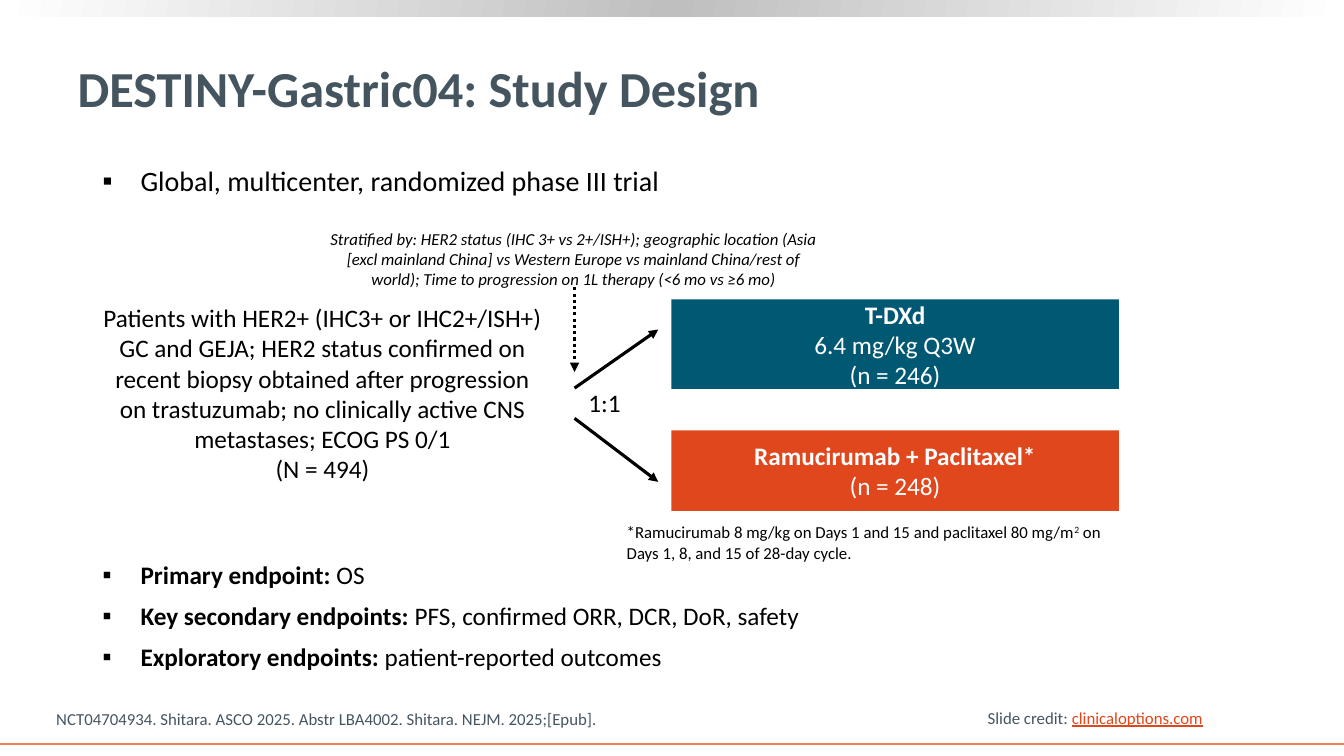
from lxml.etree import SubElement
from pptx import Presentation
from pptx.dml.color import RGBColor
from pptx.enum.dml import MSO_LINE
from pptx.enum.shapes import MSO_CONNECTOR, MSO_SHAPE
from pptx.enum.text import MSO_ANCHOR, MSO_AUTO_SIZE, PP_ALIGN
from pptx.oxml import parse_xml
from pptx.oxml.ns import nsdecls, qn
from pptx.util import Pt

BLACK = RGBColor(0x00, 0x00, 0x00)
WHITE = RGBColor(0xFF, 0xFF, 0xFF)
SLATE = RGBColor(0x45, 0x55, 0x60)
TEAL = RGBColor(0x01, 0x58, 0x73)
ORANGE = RGBColor(0xE1, 0x47, 0x1D)
CORAL = RGBColor(0xF4, 0x7D, 0x55)
SILVER = RGBColor(0xBF, 0xBF, 0xBF)

WIDTH, HEIGHT = 960, 540
BOLD = {"bold": True}
SUPERSCRIPT = {"raised": True}
LINK = {"underline": True, "color": ORANGE}
CENTER = PP_ALIGN.CENTER

# Each paragraph is a list of (text, format) spans.
TITLE = [[("DESTINY-Gastric04: Study Design", BOLD)]]
DESIGN = [[("Global, multicenter, randomized phase III trial", {})]]
ENDPOINTS = [
    [("Primary endpoint: ", BOLD), ("OS", {})],
    [("Key secondary endpoints: ", BOLD), ("PFS, confirmed ORR, DCR, DoR, safety", {})],
    [("Exploratory endpoints: ", BOLD), ("patient-reported outcomes", {})],
]
PATIENTS = [
    [("Patients with HER2+ (IHC3+ or IHC2+/ISH+) GC and GEJA; HER2 status confirmed "
      "on recent biopsy obtained after progression on trastuzumab; no clinically "
      "active CNS metastases; ECOG PS 0/1", {})],
    [("(N = 494)", {})],
]
STRATIFICATION = [[
    ("Stratified by: HER2 status (IHC 3+ vs 2+/ISH+); geographic location (Asia [excl "
     "mainland China] vs Western Europe vs mainland China/rest of world); Time to "
     "progression on 1L therapy (<6 mo vs ≥6 mo)", {"italic": True}),
]]
DOSING = [[
    ("*Ramucirumab 8 mg/kg on Days 1 and 15 and paclitaxel 80 mg/m", {}),
    ("2", SUPERSCRIPT), (" on", {}), ("\n", {}),
    ("Days 1, 8, and 15 of 28-day cycle.", {}),
]]
RATIO = [[("1:1", {})]]
CITATION = [[("NCT04704934. Shitara. ASCO 2025. Abstr LBA4002. Shitara. NEJM. 2025;[Epub].", {})]]
CREDIT = [[("Slide credit: ", {}), ("clinicaloptions.com", LINK)]]

# text, (left, top, width, height), size, colour, alignment, wrap
TEXTS = [
    (PATIENTS, (66.2, 212.4, 328.3, 138.2), 18, BLACK, CENTER, True),
    (STRATIFICATION, (225.4, 159.8, 368.6, 51.1), 12, BLACK, CENTER, True),
    (DOSING, (440.6, 369.4, 407.5, 36), 12, BLACK, None, True),
    (RATIO, (413.3, 272.9, 38.9, 28.8), 18, BLACK, None, True),
    (CITATION, (33.1, 502.6, 407.5, 21.6), 12, SLATE, None, True),
    (CREDIT, (698.4, 501.8, 169.9, 21.6), 12, SLATE, None, False),
]

# text, top, height, fill
ARM_LEFT, ARM_WIDTH = 479.5, 319.7
ARMS = [
    ([[("T-DXd", BOLD)], [("6.4 mg/kg Q3W", {})], [("(n = 246)", {})]], 213.8, 64.1, TEAL),
    ([[("Ramucirumab + Paclitaxel*", BOLD)], [("(n = 248)", {})]], 307.4, 57.6, ORANGE),
]

# start, end, dash
SPLIT_X, ARM_X = 410.4, 470.2
ARROWS = [
    ((SPLIT_X, 205.2), (SPLIT_X, 265.7), MSO_LINE.ROUND_DOT),
    ((SPLIT_X, 277.2), (ARM_X, 235.4), None),
    ((SPLIT_X, 298.8), (ARM_X, 344.2), None),
]


def place(shape, area):
    for side, value in zip(("left", "top", "width", "height"), area):
        setattr(shape, side, Pt(value))


def fill_text(shape, paragraphs, size, color, align=None, anchor=MSO_ANCHOR.TOP,
              wrap=True, bullets=False):
    frame = shape.text_frame
    frame.auto_size = MSO_AUTO_SIZE.NONE
    frame.word_wrap = wrap
    frame.vertical_anchor = anchor
    for index, spans in enumerate(paragraphs):
        para = frame.add_paragraph() if index else frame.paragraphs[0]
        para.alignment = align or PP_ALIGN.LEFT
        para.line_spacing = 0.9 if bullets else 1
        para.space_before = Pt(10 if bullets and index else 0)
        para.space_after = Pt(0)
        if bullets:
            add_bullet(para)
        for text, style in spans:
            if text == "\n":
                para.add_line_break()
            else:
                add_span(para, text, size, color, style)


def add_span(para, text, size, color, style):
    span = para.add_run()
    span.text = text
    font = span.font
    values = {"name": "Calibri", "size": Pt(size), "bold": False, "color": color, **style}
    font.color.rgb = values.pop("color")
    if values.pop("raised", False):
        font._element.set("baseline", "30000")
    for name, value in values.items():
        setattr(font, name, value)


def add_bullet(para):
    props = para._p.get_or_add_pPr()
    props.set("marL", str(Pt(27)))
    props.set("indent", str(-Pt(27)))
    tint = SubElement(props, qn("a:buClr"))
    SubElement(tint, qn("a:srgbClr"), val=str(BLACK))
    SubElement(props, qn("a:buFont"), typeface="Calibri")
    SubElement(props, qn("a:buChar"), char="▪")


def add_block(page, area, fill=None):
    block = page.shapes.add_shape(MSO_SHAPE.RECTANGLE, *map(Pt, area))
    block.shadow.inherit = False
    block.line.fill.background()
    if fill is not None:
        block.fill.solid()
        block.fill.fore_color.rgb = fill
    return block


def add_line(page, start, end, color, width, dash=None, arrow=False):
    line = page.shapes.add_connector(MSO_CONNECTOR.STRAIGHT, *map(Pt, start + end))
    line.line.color.rgb = color
    line.line.width = Pt(width)
    if dash is not None:
        line.line.dash_style = dash
    if arrow:
        SubElement(line.line._get_or_add_ln(), qn("a:tailEnd"), type="triangle")
    SubElement(line._element.spPr, qn("a:effectLst"))


def add_top_band(page):
    band = add_block(page, (0, 0, WIDTH, 11.5))
    stops = "".join(
        f'<a:gs pos="{percent * 1000}"><a:srgbClr val="{color}"/></a:gs>'
        for percent, color in ((0, WHITE), (50, SILVER), (100, WHITE)))
    gradient = parse_xml(
        f'<a:gradFill {nsdecls("a")} rotWithShape="1"><a:gsLst>{stops}</a:gsLst>'
        f'<a:lin ang="{190 * 60000}" scaled="0"/></a:gradFill>')
    band._element.spPr.find(qn("a:prstGeom")).addnext(gradient)


def main():
    deck = Presentation()
    deck.slide_width, deck.slide_height = Pt(WIDTH), Pt(HEIGHT)
    page = deck.slides.add_slide(deck.slide_layouts.get_by_name("Two Content"))
    add_top_band(page)
    add_line(page, (0, 531.4), (WIDTH, 531.4), CORAL, 1.5)

    title, design, endpoints = page.placeholders
    place(title, (48.2, 18.7, 877, 87.1))
    fill_text(title, TITLE, 36, SLATE, anchor=MSO_ANCHOR.MIDDLE)
    place(design, (66.2, 115.9, 856.8, 40.3))
    fill_text(design, DESIGN, 20, BLACK, bullets=True)
    place(endpoints, (66.2, 398.2, 821.5, 41))
    fill_text(endpoints, ENDPOINTS, 18, BLACK, bullets=True)

    for text, top, height, fill in ARMS:
        arm = add_block(page, (ARM_LEFT, top, ARM_WIDTH, height), fill)
        fill_text(arm, text, 18, WHITE, CENTER, MSO_ANCHOR.MIDDLE, wrap=False)
    for text, area, size, color, align, wrap in TEXTS:
        box = page.shapes.add_textbox(*map(Pt, area))
        fill_text(box, text, size, color, align, wrap=wrap)
    for start, end, dash in ARROWS:
        add_line(page, start, end, BLACK, 2.25, dash, arrow=True)
    deck.save("out.pptx")


if __name__ == "__main__":
    main()
